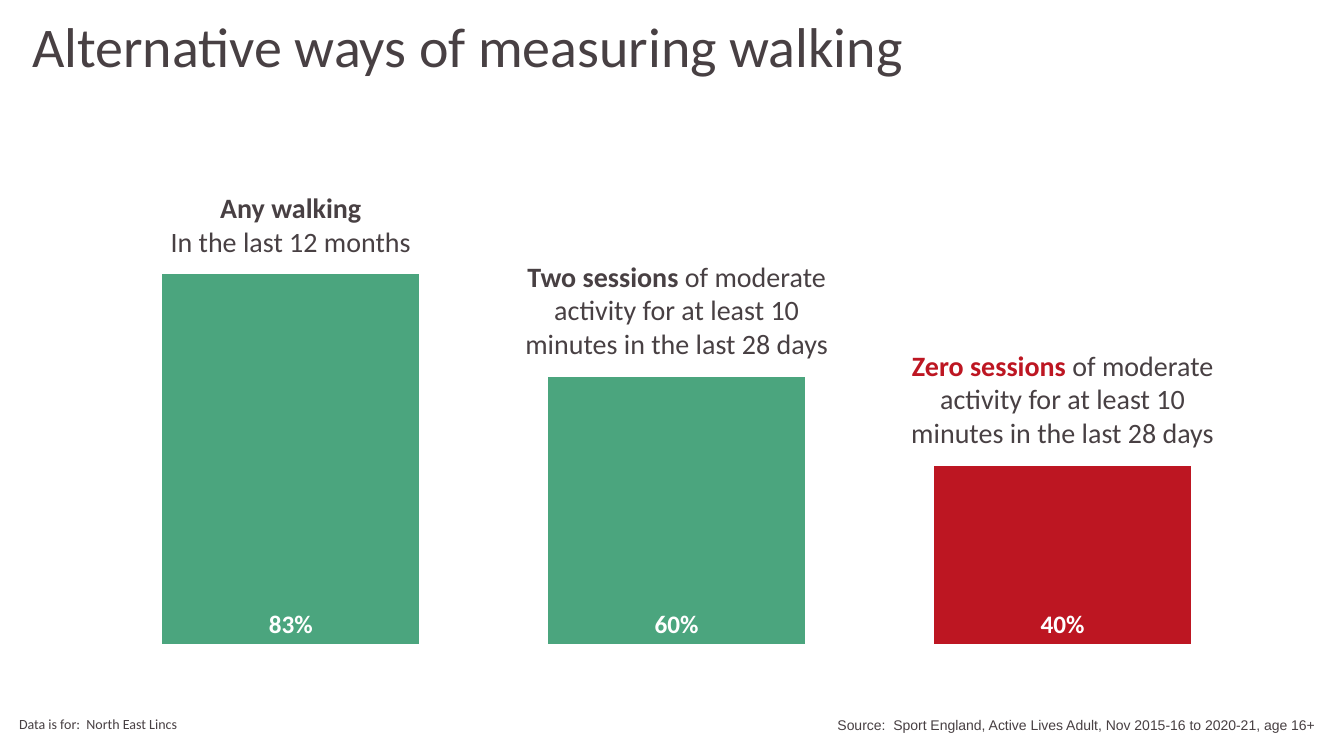
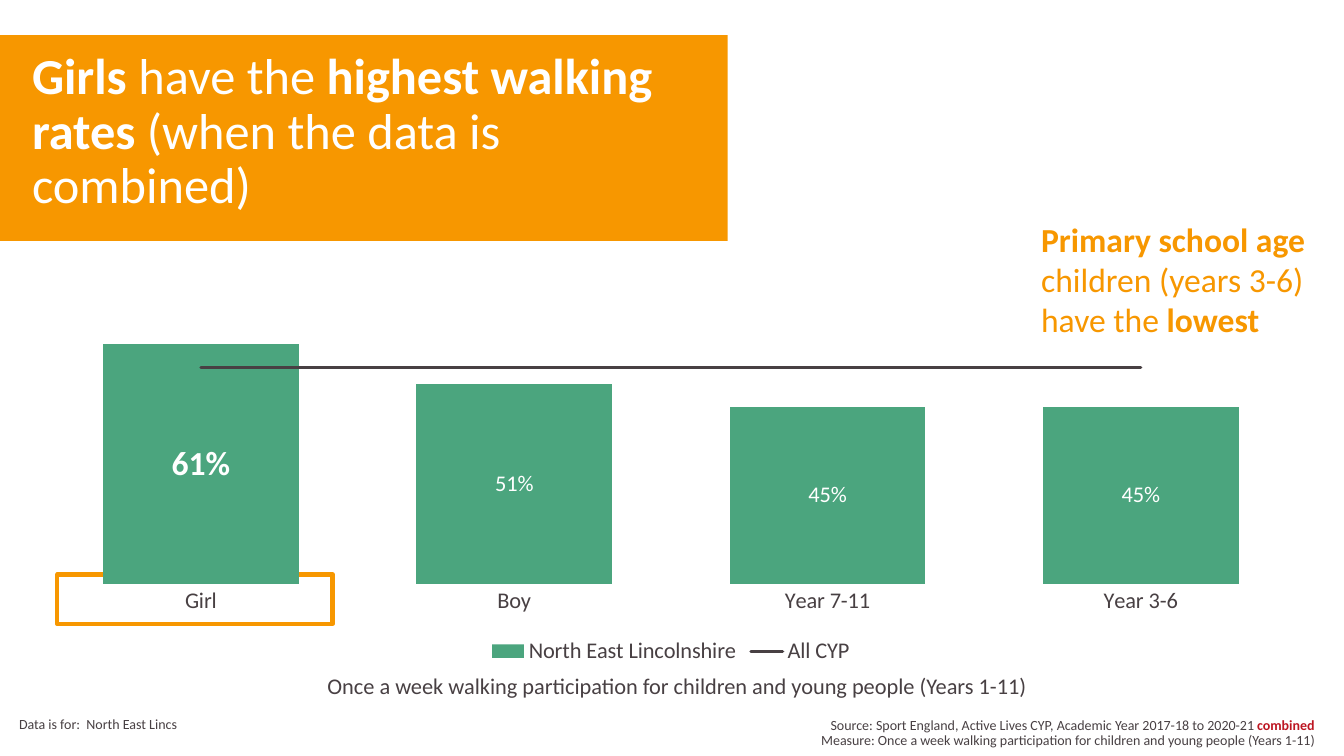
import pptx
import pptx.util
import pptx.chart.data
import pptx.dml.color
import pptx.enum.chart
import pptx.enum.shapes
import pptx.enum.text
import pptx.oxml
import pptx.oxml.ns

Pt = pptx.util.Pt
RGB = pptx.dml.color.RGBColor
Align = pptx.enum.text.PP_ALIGN
Place = pptx.enum.chart.XL_LABEL_POSITION
qn = pptx.oxml.ns.qn

INK = RGB(0x48, 0x40, 0x43)
GREEN = RGB(0x4B, 0xA5, 0x7E)
RED = RGB(0xBD, 0x16, 0x22)
ORANGE = RGB(0xF7, 0x97, 0x00)
WHITE = RGB(0xFF, 0xFF, 0xFF)
FONT = "Calibri"
WIDE, HIGH = 960, 540
CHART = (13, 129.6, 932.4, 348.5)
FOOT = (6.5, 509.8, 939.6, 30.2)


def style(font, size, color=INK, bold=False, face=FONT):
    font.name = face
    font.size = Pt(size)
    font.bold = bold
    font.color.rgb = color


def text(slide, box, paras, size=20, color=INK, face=FONT,
         align=Align.LEFT, lead=None, before=0):
    frame = slide.shapes.add_textbox(*map(Pt, box)).text_frame
    frame.word_wrap = True
    for i, runs in enumerate(paras):
        para = frame.add_paragraph() if i else frame.paragraphs[0]
        para.alignment = align
        para.space_before = Pt(before)
        if lead:
            para.line_spacing = lead
        for words, bold, *tint in runs:
            if words == "\n":
                para.add_line_break()
                continue
            run = para.add_run()
            run.text = words
            style(run.font, size, tint[0] if tint else color, bold, face)


def rect(slide, box, fill=None, line=None):
    shape = slide.shapes.add_shape(
        pptx.enum.shapes.MSO_SHAPE.RECTANGLE, *map(Pt, box))
    shape.shadow.inherit = False
    if fill is None:
        shape.fill.background()
    else:
        shape.fill.solid()
        shape.fill.fore_color.rgb = fill
    if line is None:
        shape.line.fill.background()
    else:
        shape.line.color.rgb = line
        shape.line.width = Pt(3)


def footer(slide, box, source, face=FONT):
    left, top, width, height = box
    text(slide, (left, top, 290, 18), [[("Data is for:  North East Lincs", False)]],
         size=10, lead=0.8, before=10)
    text(slide, (left + width - 426, top, 426, height), [source],
         size=10, face=face, align=Align.RIGHT, lead=0.9, before=10)


def banner(slide, box, runs):
    left, top, width, height = box
    rect(slide, box, fill=ORANGE)
    text(slide, (left + 15.8, top + 7.9, width - 36.7, height - 27), [runs],
         size=36, color=WHITE, lead=0.9)


def layout(chart, x, y, w, h):
    area = chart._chartSpace.chart.plotArea
    for old in area.findall(qn("c:layout")):
        area.remove(old)
    area.insert(0, pptx.oxml.parse_xml(
        f'<c:layout {pptx.oxml.ns.nsdecls("c")}><c:manualLayout>'
        '<c:layoutTarget val="inner"/><c:xMode val="edge"/><c:yMode val="edge"/>'
        f'<c:x val="{x}"/><c:y val="{y}"/><c:w val="{w}"/><c:h val="{h}"/>'
        '</c:manualLayout></c:layout>'))


def columns(slide, box, cats, series, size, gap, top, place, bold=False):
    data = pptx.chart.data.CategoryChartData(number_format="0%")
    data.categories = cats
    for name, vals in series:
        data.add_series(name, vals)
    chart = slide.shapes.add_chart(
        pptx.enum.chart.XL_CHART_TYPE.COLUMN_CLUSTERED, *map(Pt, box), data).chart
    style(chart.font, size)
    chart.has_title = False
    chart.has_legend = False
    axis = chart.value_axis
    axis.minimum_scale, axis.maximum_scale = 0, top
    axis.has_major_gridlines = False
    axis.visible = False
    plot = chart.plots[0]
    plot.gap_width = gap
    plot.vary_by_categories = False
    bars = plot.series[0]
    bars.format.fill.solid()
    bars.format.fill.fore_color.rgb = GREEN
    bars.invert_if_negative = False
    tags = bars.data_labels
    tags.show_value = True
    tags.number_format = "0%"
    tags.number_format_is_linked = False
    tags.position = place
    style(tags.font, 18 if bold else 16, WHITE, bold)
    return chart


def trend(chart):
    bar = chart.plots[0]._element
    ser = bar.findall(qn("c:ser"))[1]
    for flag in ser.findall(qn("c:invertIfNegative")):
        ser.remove(flag)
    line = pptx.oxml.parse_xml(
        f'<c:lineChart {pptx.oxml.ns.nsdecls("c")}><c:grouping val="standard"/>'
        '<c:varyColors val="0"/><c:marker val="1"/></c:lineChart>')
    line.insert(2, ser)
    for axis in bar.findall(qn("c:axId")):
        link = pptx.oxml.parse_xml(
            f'<c:axId {pptx.oxml.ns.nsdecls("c")} val="{axis.get("val")}"/>')
        line.append(link)
    bar.addnext(line)
    mean = chart.plots[1].series[0]
    mean.smooth = False
    mean.marker.style = pptx.enum.chart.XL_MARKER_STYLE.NONE
    mean.format.line.color.rgb = INK
    mean.format.line.width = Pt(2.25)
    mean.format.line._ln.set("cap", "rnd")


def stress(series, place):
    tag = series.points[0].data_label
    style(tag.font, 24, WHITE, True)
    tag.position = place
    node = series._element.find(qn("c:dLbls")).find(qn("c:dLbl"))
    node.find(qn("c:idx")).addnext(pptx.oxml.parse_xml(
        f'<c:numFmt {pptx.oxml.ns.nsdecls("c")} formatCode="0%" sourceLinked="0"/>'))


def heads(slide, box, vals, notes):
    left, top, width, height = box
    step = 0.887 * width / len(vals)
    base, unit = top + 0.948 * height, 0.822 * height / 0.9
    for i, (val, (rows, paras)) in enumerate(zip(vals, notes)):
        deep = 24.4 * rows + 7.2
        mid = left + 0.061 * width + step * (i + 0.5)
        text(slide, (mid - 123, base - val * unit - 7 - deep, 246, deep),
             paras, align=Align.CENTER)


def ways(slide):
    text(slide, (15.8, 10, 929.5, 119.5),
         [[("Alternative ways of measuring walking", False)]],
         size=40, lead=0.9, before=10)
    vals = (0.83, 0.6, 0.4)
    rest = "of moderate activity for at least 10 minutes in the last 28 days"
    heads(slide, CHART, vals, (
        (2, [[("Any walking", True)], [("In the last 12 months", False)]]),
        (3, [[("Two sessions", True), (" " + rest, False)]]),
        (3, [[("Zero sessions ", True, RED), (rest, False)]])))
    footer(slide, FOOT, [("Source:  Sport England, Active Lives Adult, "
                          "Nov 2015-16 to 2020-21, age 16+", False)], face="Arial")
    chart = columns(slide, CHART, ("1", "2", "3"), [("Series 1", vals)],
                    10, 50, 0.9, Place.INSIDE_BASE, bold=True)
    chart.category_axis.visible = False
    fill = chart.plots[0].series[0].points[2].format.fill
    fill.solid()
    fill.fore_color.rgb = RED
    layout(chart, 0.061, 0.126, 0.887, 0.822)


def rates(slide):
    text(slide, (226.8, 481.7, 633, 21.6),
         [[("Once a week walking participation for children and young people "
            "(Years 1-11)", False)]], size=16, lead=0.7)
    rect(slide, (41, 410.4, 196.6, 35.3), line=ORANGE)
    text(slide, (736.6, 152.6, 230.4, 94.3),
         [[("Primary school age ", True), ("children (years 3-6) have the ", False),
           ("lowest", True)]], size=24, color=ORANGE)
    banner(slide, (0, 25.2, 519.8, 146.9),
           [("Girls", True), (" have the ", False), ("highest walking rates", True),
            (" (when the data is combined)", False)])
    footer(slide, FOOT, [
        ("Source: Sport England, Active Lives CYP, Academic Year 2017-18 to 2020-21 ",
         False), ("combined", True, RED), ("\n", False),
        ("Measure: Once a week walking participation for children and young people "
         "(Years 1-11)", False)])
    chart = columns(slide, CHART, ("Girl", "Boy", "Year 7-11", "Year 3-6"),
                    [("North East Lincolnshire", (0.61, 0.51, 0.45, 0.45)),
                     ("All CYP", (0.55,) * 4)], 16, 60, 1, Place.CENTER)
    axis = chart.category_axis
    axis.major_tick_mark = pptx.enum.chart.XL_TICK_MARK.NONE
    axis.format.line.fill.background()
    style(axis.tick_labels.font, 16)
    stress(chart.plots[0].series[0], Place.CENTER)
    trend(chart)
    chart.has_legend = True
    chart.legend.position = pptx.enum.chart.XL_LEGEND_POSITION.BOTTOM
    chart.legend.include_in_layout = False
    style(chart.legend.font, 16)
    layout(chart, 0.02, 0.02, 0.96, 0.805)


def main():
    deck = pptx.Presentation()
    deck.slide_width, deck.slide_height = Pt(WIDE), Pt(HIGH)
    for build in (ways, rates):
        build(deck.slides.add_slide(deck.slide_layouts[6]))
    deck.save("out.pptx")


if __name__ == "__main__":
    main()
